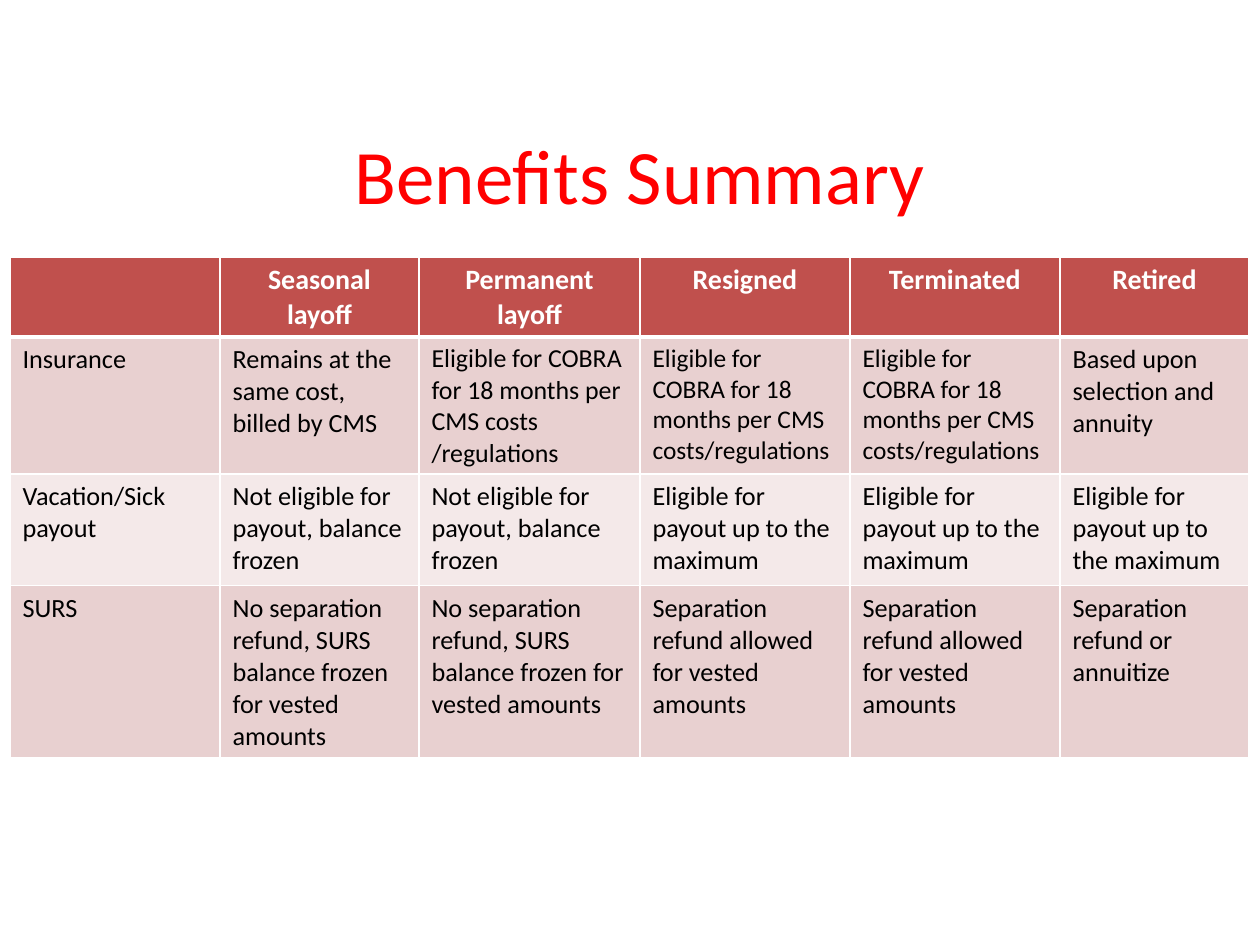
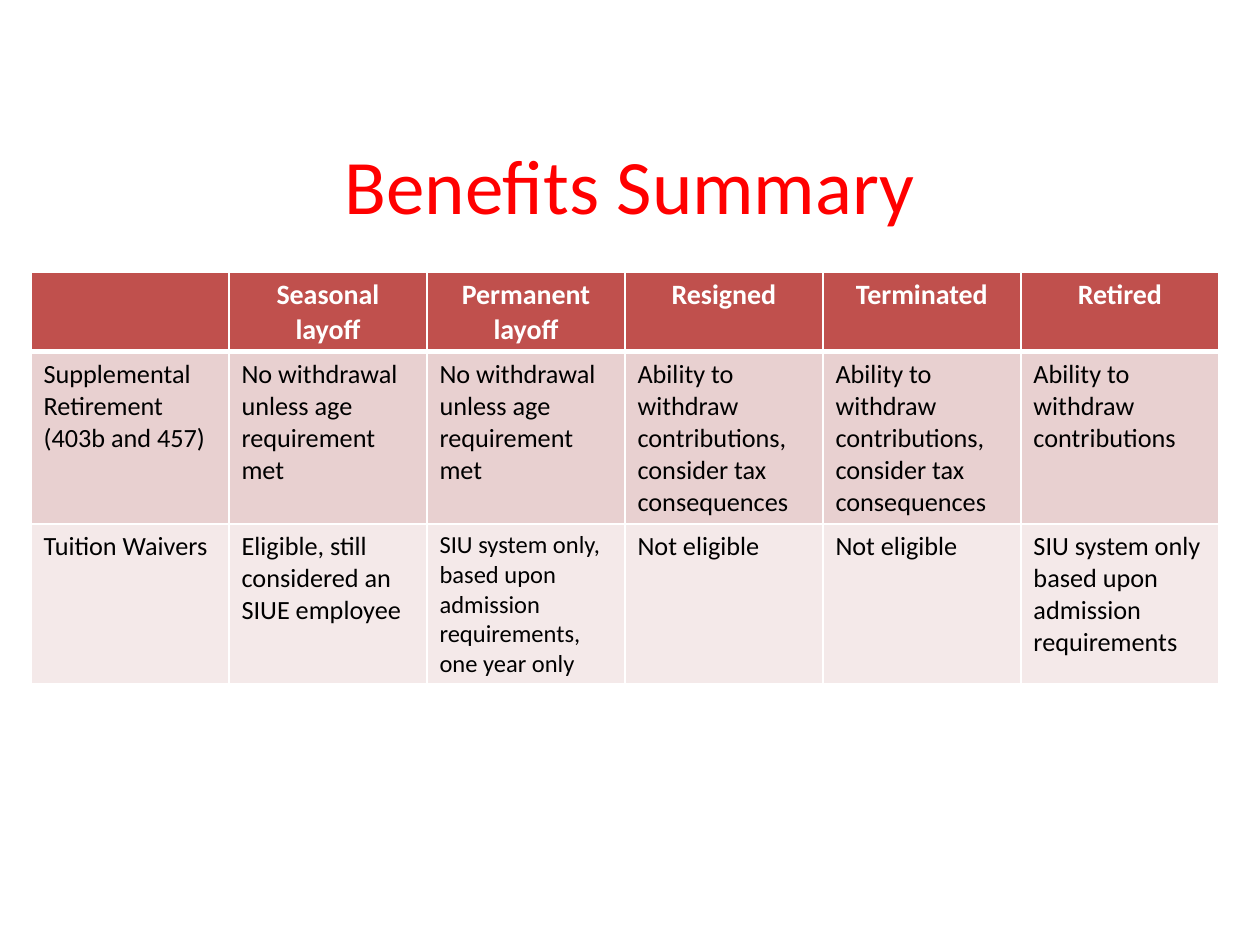
from pptx import Presentation
from pptx.dml.color import RGBColor
from pptx.enum.text import MSO_ANCHOR, PP_ALIGN
from pptx.oxml import parse_xml
from pptx.oxml.ns import nsdecls
from pptx.util import Emu, Pt

RED = RGBColor(0xFF, 0x00, 0x00)
BLACK = RGBColor(0x00, 0x00, 0x00)
WHITE = RGBColor(0xFF, 0xFF, 0xFF)
BRICK = RGBColor(0xC0, 0x50, 0x4D)
ROSE = RGBColor(0xE8, 0xD0, 0xD0)
BLUSH = RGBColor(0xF4, 0xE9, 0xE9)

TITLE_FONT = {"name": "Calibri", "size": Pt(44), "bold": False}
HEADER_FONT = {"name": "Calibri", "size": Pt(16), "bold": True}
BODY_FONT = {"name": "Calibri", "size": Pt(15), "bold": False}

HEADINGS = ["", "Seasonal layoff", "Permanent layoff", "Resigned", "Terminated", "Retired"]
COBRA = "Eligible for COBRA for 18 months per CMS costs/regulations"
FROZEN = "Not eligible for payout, balance frozen"
MAXIMUM = "Eligible for payout up to the maximum"
NO_REFUND = "No separation refund, SURS balance frozen for vested amounts"
REFUND = "Separation refund allowed for vested amounts"
NO_WITHDRAWAL = "No withdrawal unless age requirement met"
WITHDRAWAL = "Ability to withdraw contributions, consider tax consequences"

SUMMARIES = [
    {
        "title_at": (73, 116),
        "table_at": (10, 257),
        "widths": [210, 199, 221, 210, 210, 189],
        "heights": [78, 137, 112, 172],
        "rows": [
            ["Insurance", "Remains at the same cost, billed by CMS",
             "Eligible for COBRA for 18 months per CMS costs /regulations",
             COBRA, COBRA, "Based upon selection and annuity"],
            ["Vacation/Sick payout", FROZEN, FROZEN, MAXIMUM, MAXIMUM, MAXIMUM],
            ["SURS", NO_REFUND, NO_REFUND, REFUND, REFUND, "Separation refund or annuitize"],
        ],
        "tight_sizes": {(1, 2): 14.8, (1, 3): 14.5, (1, 4): 14.5},
    },
    {
        "title_at": (63, 126),
        "table_at": (31, 272),
        "widths": [198] * 6,
        "heights": [78, 172, 160],
        "rows": [
            ["Supplemental Retirement (403b and 457)", NO_WITHDRAWAL, NO_WITHDRAWAL,
             WITHDRAWAL, WITHDRAWAL, "Ability to withdraw contributions"],
            ["Tuition Waivers", "Eligible, still considered an SIUE employee",
             "SIU system only, based upon admission requirements, one year only",
             "Not eligible", "Not eligible",
             "SIU system only based upon admission requirements"],
        ],
        "tight_sizes": {(2, 2): 14},
    },
]


def px(count):
    return Emu(round(count * 914400 / 126))


def write(paragraph, text, font_format, color, align):
    paragraph.alignment = align
    font = paragraph.font
    if text:
        run = paragraph.add_run()
        run.text = text
        font = run.font
    for attribute, value in font_format.items():
        setattr(font, attribute, value)
    font.color.rgb = color


prs = Presentation()
prs.slide_width, prs.slide_height = px(1260), px(945)

for summary in SUMMARIES:
    slide = prs.slides.add_slide(prs.slide_layouts[6])

    title = slide.shapes.add_textbox(*map(px, summary["title_at"]), px(1134), px(116)).text_frame
    title.word_wrap = True
    title.vertical_anchor = MSO_ANCHOR.MIDDLE
    write(title.paragraphs[0], "Benefits Summary", TITLE_FONT, RED, PP_ALIGN.CENTER)

    widths, heights = summary["widths"], summary["heights"]
    benefits = slide.shapes.add_table(
        len(heights), len(widths), *map(px, summary["table_at"]),
        px(sum(widths)), px(sum(heights))).table
    for column, width in zip(benefits.columns, widths):
        column.width = px(width)
    for row, height in zip(benefits.rows, heights):
        row.height = px(height)

    for r, texts in enumerate([HEADINGS] + summary["rows"]):
        for c, text in enumerate(texts):
            cell = benefits.cell(r, c)
            borders = {"L": 1, "R": 1, "T": 3 if r == 1 else 1, "B": 3 if r == 0 else 1}
            for side, points in borders.items():
                cell._tc.get_or_add_tcPr().append(parse_xml(
                    f'<a:ln{side} {nsdecls("a")} w="{Pt(points)}"><a:solidFill>'
                    f'<a:srgbClr val="{WHITE}"/></a:solidFill></a:ln{side}>'))
            cell.fill.solid()
            paragraph = cell.text_frame.paragraphs[0]
            if r == 0:
                cell.fill.fore_color.rgb = BRICK
                write(paragraph, text, HEADER_FONT, WHITE, PP_ALIGN.CENTER)
            else:
                cell.fill.fore_color.rgb = ROSE if r % 2 else BLUSH
                size = Pt(summary["tight_sizes"].get((r, c), 15))
                write(paragraph, text, {**BODY_FONT, "size": size}, BLACK, PP_ALIGN.LEFT)

prs.save("out.pptx")
